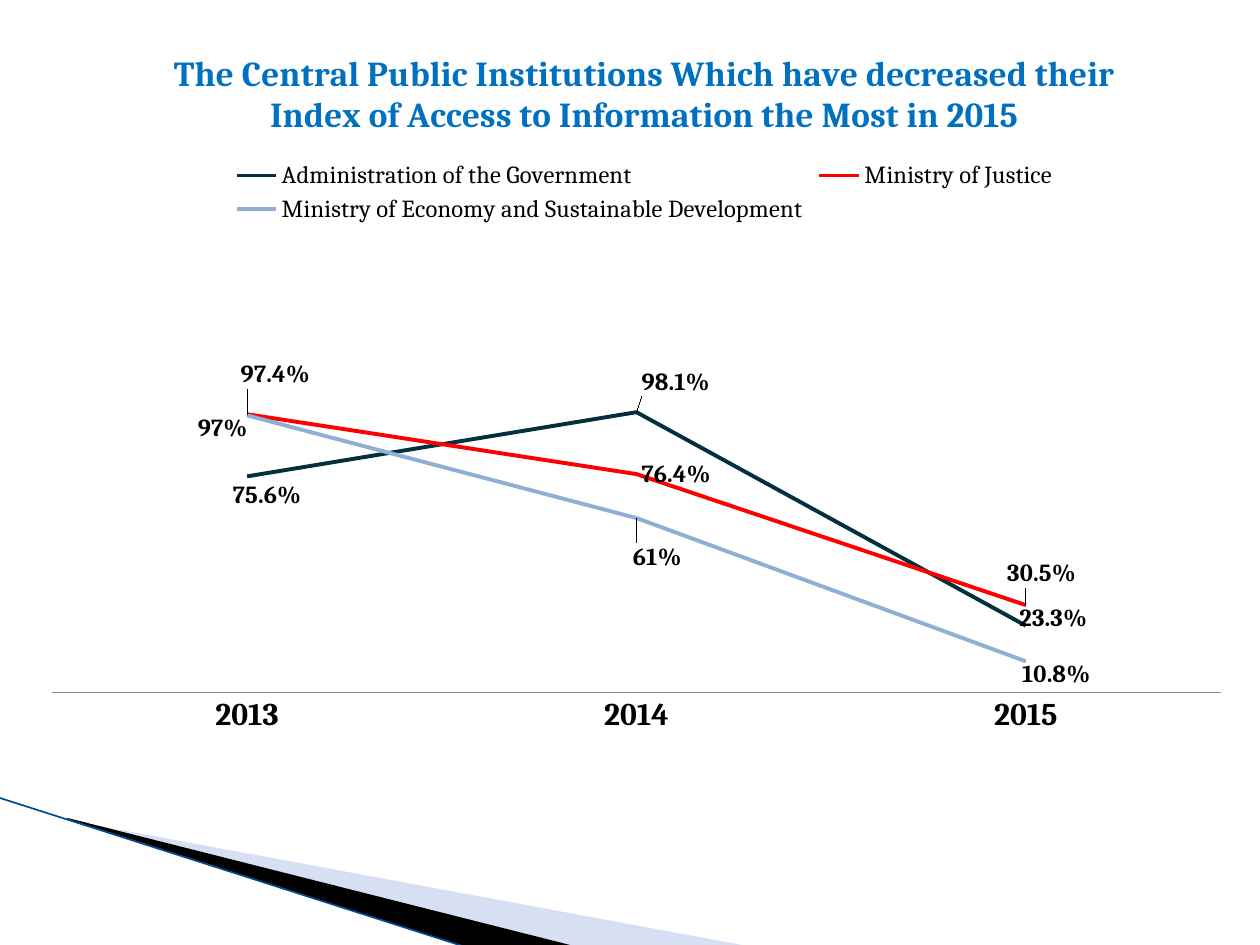
import pptx
import pptx.chart.data
import pptx.dml.color
import pptx.enum.chart
import pptx.enum.shapes
import pptx.oxml
import pptx.oxml.ns
import pptx.util
from lxml import etree

Pt = pptx.util.Pt
FONT = "Cambria"
COLORS = {
    "title": "0070C0", "text": "000000", "axis": "8B8B8B",
    "pale": "9DB2E1", "black": "000000", "edge": "004A8F",
}
TITLE = ("The Central Public Institutions Which have decreased their "
         "Index of Access to Information the Most in 2015")
YEARS = ["2013", "2014", "2015"]
PERCENT = "General\\%"
# Name, values, colour, and label shift in points for each moved point
SERIES = [
    ("Administration of the Government", (75.6, 98.1, 23.3), "02303E",
     {0: (-11, 11), 1: (0, -17), 2: (-6.5, -4)}),
    ("Ministry of Justice", (97.4, 76.4, 30.5), "FF0000",
     {0: (-6.5, -22.5), 2: (-13.5, -18)}),
    ("Ministry of Economy and Sustainable Development", (97, 61, 10.8), "8FAFD5",
     {0: (-31, 7.5), 1: (-5, 22.5), 2: (-5, 7.5)}),
]
NO_LEADERS = (
    f'<c:extLst {pptx.oxml.ns.nsdecls("c")}>'
    '<c:ext uri="{CE6537A1-D6FC-4f65-9D91-7224C49458BB}" '
    'xmlns:c15="http://schemas.microsoft.com/office/drawing/2012/chart">'
    '<c15:showLeaderLines val="0"/></c:ext></c:extLst>')


def rgb(name):
    return pptx.dml.color.RGBColor.from_string(COLORS.get(name, name))


def style_font(font, size, bold=False, color="text"):
    font.name = FONT
    font.size = Pt(size)
    font.bold = bold
    font.color.rgb = rgb(color)


def make_layout(**settings):
    """Return a manual chart layout element holding the settings in order."""
    layout = pptx.oxml.parse_xml(
        f'<c:layout {pptx.oxml.ns.nsdecls("c")}><c:manualLayout/></c:layout>')
    for tag, value in settings.items():
        etree.SubElement(layout[0], pptx.oxml.ns.qn(f"c:{tag}")).set("val", str(value))
    return layout


def set_layout(parent, after, layout):
    """Put the layout in the parent behind its child named after."""
    for old in parent.findall(pptx.oxml.ns.qn("c:layout")):
        parent.remove(old)
    anchor = parent.find(pptx.oxml.ns.qn(after)) if after else None
    if anchor is None:
        parent.insert(0, layout)
    else:
        anchor.addnext(layout)


def set_frame(wedge, left, top, width, height):
    """Give the wedge a frame of its own while its outline stays in place."""
    across, down = wedge.left - left, wedge.top - top
    outline = wedge._element.find(".//" + pptx.oxml.ns.qn("a:pathLst"))[0]
    outline.set("w", str(width))
    outline.set("h", str(height))
    for point in outline.iter(pptx.oxml.ns.qn("a:pt")):
        point.set("x", str(int(point.get("x")) + across))
        point.set("y", str(int(point.get("y")) + down))
    wedge.left, wedge.top, wedge.width, wedge.height = left, top, width, height


def add_wedge(page, points, frame, color, alpha=None):
    builder = page.shapes.build_freeform(*points[0], scale=1.0)
    builder.add_line_segments(points[1:], close=True)
    wedge = builder.convert_to_shape()
    set_frame(wedge, *frame)
    wedge.shadow.inherit = False
    wedge.line.fill.background()
    wedge.fill.solid()
    wedge.fill.fore_color.rgb = rgb(color)
    if alpha:
        fill_color = wedge.fill._xPr.find(".//" + pptx.oxml.ns.qn("a:srgbClr"))
        etree.SubElement(fill_color, pptx.oxml.ns.qn("a:alpha")).set("val", str(alpha * 1000))


def add_corner(page, left, top):
    """Draw the wedges and the edge line of the lower left corner."""
    def place(x, y):
        return Pt(left + x), Pt(top + y)

    add_wedge(page, [place(39.6, 13), place(428.4, 85), place(328.3, 85), place(39.6, 12.2)],
              (*place(56.2, -62), Pt(299.5), Pt(113.8)), "pale", 40)
    add_wedge(page, [place(38.2, 11.5), place(329, 85), place(267.8, 85.7), place(38.9, 12.2)],
              (*place(-4.3, 0), Pt(299.5), Pt(66.2)), "black")
    edge = page.shapes.add_connector(
        pptx.enum.shapes.MSO_CONNECTOR.STRAIGHT, *place(-0.7, 0), *place(267.1, 85.7))
    edge.line.width = Pt(0.95)
    edge.line.color.rgb = rgb("edge")
    etree.SubElement(edge._element.spPr, pptx.oxml.ns.qn("a:effectLst"))


def style_series(line, color, shifts, width, height):
    line.smooth = False
    line.format.line.width = Pt(2.25)
    line.format.line.color.rgb = rgb(color)
    line.marker.style = pptx.enum.chart.XL_MARKER_STYLE.NONE
    labels = line.data_labels
    labels.show_value = True
    labels.number_format = PERCENT
    labels.number_format_is_linked = False
    labels.position = pptx.enum.chart.XL_LABEL_POSITION.RIGHT
    style_font(labels.font, 14, True)
    for index, (across, down) in shifts.items():
        label = line.points[index].data_label
        style_font(label.font, 14, True)
        label.position = pptx.enum.chart.XL_LABEL_POSITION.RIGHT
        element = label._get_or_add_dLbl()
        layout = make_layout(x=across / width, y=down / height)
        set_layout(element, "c:idx", layout)
        number_format = etree.Element(pptx.oxml.ns.qn("c:numFmt"))
        number_format.set("formatCode", PERCENT)
        number_format.set("sourceLinked", "0")
        layout.addnext(number_format)
    labels._element.append(pptx.oxml.parse_xml(NO_LEADERS))


def add_index_chart(page, left, top, width, height):
    data = pptx.chart.data.CategoryChartData(number_format="General")
    data.categories = YEARS
    for name, values, _, _ in SERIES:
        data.add_series(name, values)
    chart = page.shapes.add_chart(
        pptx.enum.chart.XL_CHART_TYPE.LINE,
        Pt(left), Pt(top), Pt(width), Pt(height), data).chart
    style_font(chart.font, 10)

    chart.has_title = True
    chart.chart_title.text_frame.text = TITLE
    style_font(chart.chart_title.text_frame.paragraphs[0].runs[0].font, 20, True, "title")
    chart.chart_title.include_in_layout = False
    set_layout(chart.chart_title._element, "c:tx",
               make_layout(xMode="edge", yMode="edge", x=0.1125, y=0.028))

    chart.has_legend = True
    chart.legend.position = pptx.enum.chart.XL_LEGEND_POSITION.TOP
    chart.legend.include_in_layout = False
    style_font(chart.legend.font, 14)
    set_layout(chart.legend._element, "c:legendPos",
               make_layout(xMode="edge", yMode="edge", x=-0.004, y=0.213, w=0.835, h=0.188))

    years = chart.category_axis
    years.major_tick_mark = pptx.enum.chart.XL_TICK_MARK.NONE
    years.format.line.color.rgb = rgb("axis")
    style_font(years.tick_labels.font, 18, True)
    scale = chart.value_axis
    scale.minimum_scale, scale.maximum_scale = 0, 120
    scale.has_major_gridlines = False
    scale.visible = False

    set_layout(chart._chartSpace.chart.plotArea, None,
               make_layout(layoutTarget="inner", xMode="edge", yMode="edge",
                           x=0.019, y=0.398, w=0.949, h=0.415))
    for line, (_, _, color, shifts) in zip(chart.plots[0].series, SERIES):
        style_series(line, color, shifts, width, height)


def main():
    deck = pptx.Presentation()
    deck.slide_width, deck.slide_height = Pt(720), Pt(540)
    page = deck.slides.add_slide(deck.slide_layouts[6])
    add_corner(page, 0, 455.8)
    add_index_chart(page, 16.6, 12.2, 703.4, 471.6)
    deck.save("out.pptx")


if __name__ == "__main__":
    main()
